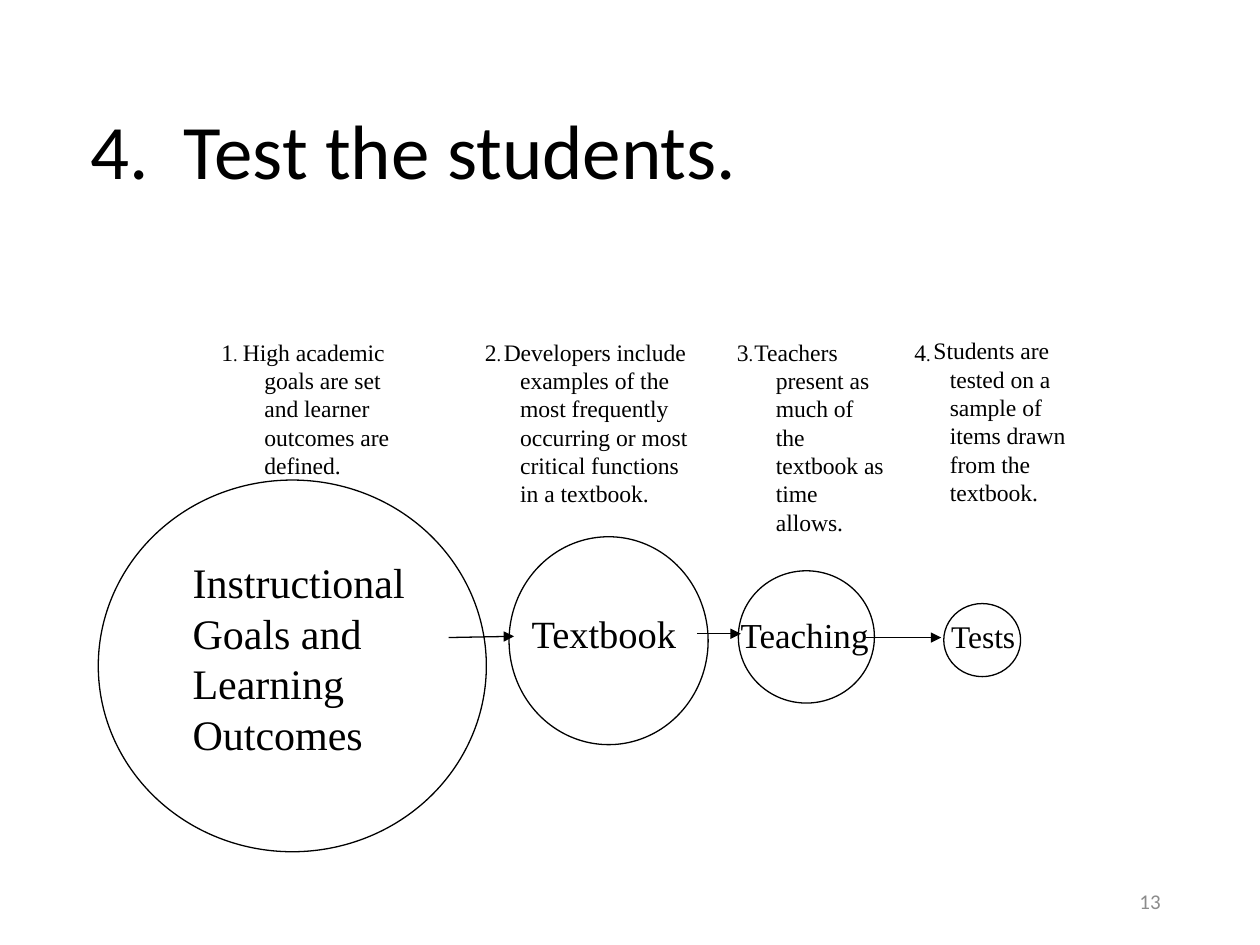
from dataclasses import dataclass

import pptx
import pptx.dml.color
import pptx.enum.shapes
import pptx.enum.text
import pptx.oxml
import pptx.oxml.ns
import pptx.util

Inches = pptx.util.Inches
Pt = pptx.util.Pt
Align = pptx.enum.text.PP_ALIGN
Anchor = pptx.enum.text.MSO_ANCHOR

COLORS = {"ink": "000000", "page_number": "8C8C8C"}
SERIF = "Times New Roman"
SANS = "Calibri"
NOTE_SIZE = 13.5
HANGING = 0.5


@dataclass
class Stage:
    circle: tuple[float, float, float, float]
    label: str
    label_at: tuple[float, float, float, float]
    label_size: float
    note: str
    note_at: tuple[float, float, float, float]
    first_line: float
    number_left: float


STAGES = [
    Stage((0.78, 3.81, 3.08, 2.95), "Instructional Goals and Learning Outcomes",
          (1.43, 4.37, 1.99, 1.72), 24,
          "High academic goals are set and learner outcomes are defined.",
          (1.5, 2.63, 1.69, 1.24), 0.33, 1.66),
    Stage((4.04, 4.26, 1.58, 1.65), "Textbook", (4.12, 4.79, 1.45, 0.47), 22,
          "Developers include examples of the most frequently occurring "
          "or most critical functions in a textbook.",
          (3.53, 2.63, 2.13, 1.46), 0.37, 3.75),
    Stage((5.86, 4.53, 1.08, 1.05), "Teaching", (5.78, 4.82, 1.31, 0.44), 20,
          "Teachers present as much of the textbook as time allows.",
          (5.56, 2.63, 1.56, 1.69), 0.33, 5.75),
    Stage((7.49, 4.79, 0.61, 0.58), "Tests", (7.45, 4.85, 0.74, 0.4), 18,
          "Students are tested on a sample of items drawn from the textbook.",
          (6.94, 2.62, 1.62, 1.46), 0.37, 7.16),
]
ARROWS = [
    (3.56, 5.06, 4.08, 5.05),
    (5.53, 5.03, 5.88, 5.03),
    (6.87, 5.06, 7.47, 5.06),
]


def color(name: str) -> pptx.dml.color.RGBColor:
    return pptx.dml.color.RGBColor.from_string(COLORS[name])


def add_span(para, text: str, *, size: float, font: str = SERIF, ink: str = "ink") -> None:
    span = para.add_run()
    span.text = text
    span.font.size = Pt(size)
    span.font.name = font
    span.font.color.rgb = color(ink)


def add_text(page, at: tuple, text: str, *, size: float, font: str = SERIF,
             ink: str = "ink", align=Align.LEFT, anchor=Anchor.TOP,
             wrap: bool = True, first_line: float | None = None):
    """Add a text box; first_line is where the first line of a hanging paragraph starts."""
    box = page.shapes.add_textbox(*map(Inches, at))
    box.text_frame.word_wrap = wrap
    box.text_frame.vertical_anchor = anchor
    para = box.text_frame.paragraphs[0]
    para.alignment = align
    if first_line is not None:
        props = para._p.get_or_add_pPr()
        props.set("marL", str(Inches(HANGING)))
        props.set("indent", str(Inches(first_line - HANGING)))
    add_span(para, text, size=size, font=font, ink=ink)
    return para


def add_circle(page, at: tuple) -> None:
    circle = page.shapes.add_shape(pptx.enum.shapes.MSO_SHAPE.OVAL, *map(Inches, at))
    circle.shadow.inherit = False
    circle.fill.background()
    circle.line.color.rgb = color("ink")
    circle.line.width = Pt(0.75)


def add_arrow(page, ends: tuple) -> None:
    arrow = page.shapes.add_connector(
        pptx.enum.shapes.MSO_CONNECTOR.STRAIGHT, *map(Inches, ends))
    arrow.line.color.rgb = color("ink")
    arrow.line.width = Pt(0.75)
    head = pptx.oxml.parse_xml(
        f'<a:tailEnd {pptx.oxml.ns.nsdecls("a")} type="triangle"/>')
    arrow.line._get_or_add_ln().append(head)
    effects = pptx.oxml.parse_xml(f'<a:effectLst {pptx.oxml.ns.nsdecls("a")}/>')
    arrow._element.spPr.append(effects)


def main() -> None:
    deck = pptx.Presentation()
    deck.slide_width, deck.slide_height = Inches(10), Inches(7.5)
    page = deck.slides.add_slide(deck.slide_layouts[5])

    # Title
    title = page.shapes.title
    title.left, title.top, title.width, title.height = map(Inches, (0.62, 0.36, 9.23, 1.74))
    title.text_frame.vertical_anchor = Anchor.MIDDLE
    para = title.text_frame.paragraphs[0]
    para.alignment = Align.LEFT
    para.line_spacing = 0.9
    add_span(para, "4.  Test the students.", size=44, font=SANS)

    # Page number
    add_text(page, (7.06, 6.95, 2.25, 0.4), "13", size=12, font=SANS,
             ink="page_number", align=Align.RIGHT, anchor=Anchor.MIDDLE)

    # Shrinking circles with their labels and numbered notes
    for stage in STAGES:
        add_circle(page, stage.circle)
    for number, stage in enumerate(STAGES, start=1):
        add_text(page, stage.label_at, stage.label, size=stage.label_size)
        add_text(page, stage.note_at, stage.note, size=NOTE_SIZE,
                 first_line=stage.first_line)
        para = add_text(page, (stage.number_left, 2.63, 0.33, 0.33), str(number),
                        size=NOTE_SIZE, wrap=False)
        add_span(para, ".", size=10.5)

    # Arrows from stage to stage
    for ends in ARROWS:
        add_arrow(page, ends)

    deck.save("out.pptx")


if __name__ == "__main__":
    main()
